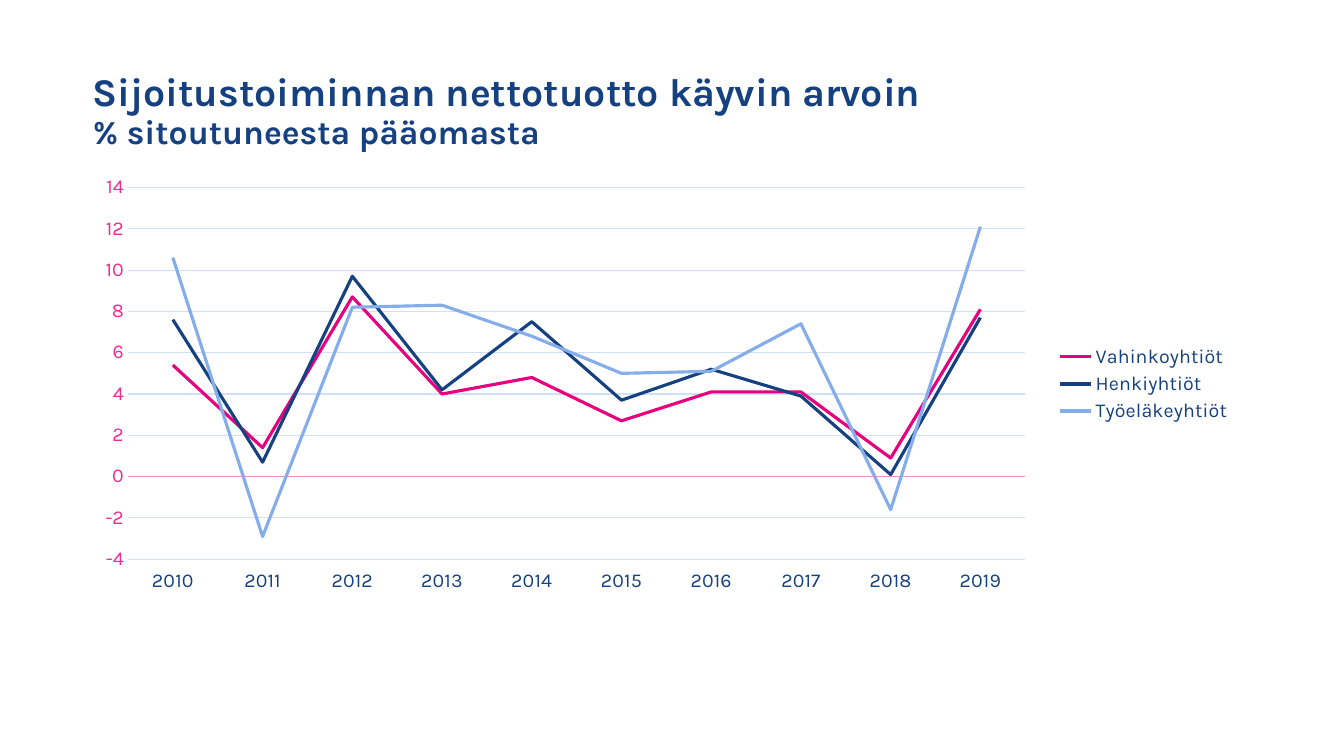
"""Build a slide with a line chart of net investment returns by company type."""
from lxml import etree
from pptx import Presentation
from pptx.chart.data import CategoryChartData
from pptx.dml.color import RGBColor
from pptx.enum.chart import XL_CHART_TYPE, XL_LEGEND_POSITION, XL_MARKER_STYLE, XL_TICK_LABEL_POSITION, XL_TICK_MARK
from pptx.enum.text import MSO_ANCHOR
from pptx.oxml.ns import qn
from pptx.util import Inches, Pt

FONT = "Karla"
NAVY = "164180"
TITLE = [("Sijoitustoiminnan nettotuotto käyvin arvoin", 28), ("% sitoutuneesta pääomasta", 24)]
YEARS = [str(year) for year in range(2010, 2020)]
SERIES = [
    ("Vahinkoyhtiöt", "E6007E", [5.4, 1.4, 8.7, 4, 4.8, 2.7, 4.1, 4.1, 0.9, 8.1]),
    ("Henkiyhtiöt", NAVY, [7.6, 0.7, 9.7, 4.2, 7.5, 3.7, 5.2, 3.9, 0.1, 7.7]),
    ("Työeläkeyhtiöt", "84ADEA", [10.6, -2.9, 8.2, 8.3, 6.8, 5, 5.1, 7.4, -1.6, 12.1]),
]
LEFT, WIDTH = 0.82, 11.5
TITLE_TOP, TITLE_HEIGHT = 0.39, 1.45
CHART_TOP, CHART_HEIGHT = 1.66, 4.3
PLOT_EDGES = (1.27, 1.86, 10.17, 5.55)


def color(value):
    return RGBColor.from_string(value)


def style_font(font, size, value, bold=False):
    font.name, font.size, font.bold = FONT, Pt(size), bold
    font.color.rgb = color(value)


def style_line(line, value, width):
    line.color.rgb = color(value)
    line.width = Pt(width)


def add_title(slide):
    box = slide.shapes.add_textbox(Inches(LEFT), Inches(TITLE_TOP), Inches(WIDTH), Inches(TITLE_HEIGHT))
    frame = box.text_frame
    frame.word_wrap = True
    frame.vertical_anchor = MSO_ANCHOR.MIDDLE
    para = frame.paragraphs[0]
    para.text = "\v".join(text for text, size in TITLE)
    para.line_spacing = 0.9
    for span, (text, size) in zip(para.runs, TITLE):
        style_font(span.font, size, NAVY, True)


def place_plot(chart):
    left, top, right, bottom = PLOT_EDGES
    shares = {
        "x": (left - LEFT) / WIDTH,
        "y": (top - CHART_TOP) / CHART_HEIGHT,
        "w": (right - left) / WIDTH,
        "h": (bottom - top) / CHART_HEIGHT,
    }
    area = chart._chartSpace.chart.plotArea
    for old in area.findall(qn("c:layout")):
        area.remove(old)
    layout = etree.Element(qn("c:layout"))
    area.insert(0, layout)
    manual = etree.SubElement(layout, qn("c:manualLayout"))
    settings = [("layoutTarget", "inner"), ("xMode", "edge"), ("yMode", "edge")]
    settings += [(key, f"{share:.4f}") for key, share in shares.items()]
    for tag, value in settings:
        etree.SubElement(manual, qn(f"c:{tag}")).set("val", value)


def add_returns_chart(slide):
    data = CategoryChartData()
    data.categories = YEARS
    for name, value, returns in SERIES:
        data.add_series(name, returns)
    chart = slide.shapes.add_chart(
        XL_CHART_TYPE.LINE, Inches(LEFT), Inches(CHART_TOP), Inches(WIDTH), Inches(CHART_HEIGHT), data
    ).chart
    chart.has_title = False
    style_font(chart.font, 14, NAVY)
    chart.has_legend = True
    chart.legend.position = XL_LEGEND_POSITION.RIGHT
    chart.legend.include_in_layout = False
    style_font(chart.legend.font, 14, NAVY)
    chart.plots[0].vary_by_categories = False
    for series, (name, value, returns) in zip(chart.plots[0].series, SERIES):
        series.smooth = False
        series.marker.style = XL_MARKER_STYLE.NONE
        style_line(series.format.line, value, 2.25)

    years, percents = chart.category_axis, chart.value_axis
    for axis, value in ((years, NAVY), (percents, "EE2C90")):
        axis.major_tick_mark = axis.minor_tick_mark = XL_TICK_MARK.NONE
        style_font(axis.tick_labels.font, 14, value)
    years.tick_label_position = XL_TICK_LABEL_POSITION.LOW
    style_line(years.format.line, "EF90BD", 1.25)
    percents.minimum_scale, percents.maximum_scale, percents.major_unit = -4, 14, 2
    percents.format.line.fill.background()
    percents.has_major_gridlines = True
    style_line(percents.major_gridlines.format.line, "D1E0F7", 0.75)
    place_plot(chart)


def main():
    deck = Presentation()
    deck.slide_width, deck.slide_height = Inches(13.33), Inches(7.5)
    page = deck.slides.add_slide(deck.slide_layouts[6])
    add_title(page)
    add_returns_chart(page)
    deck.save("out.pptx")


if __name__ == "__main__":
    main()
